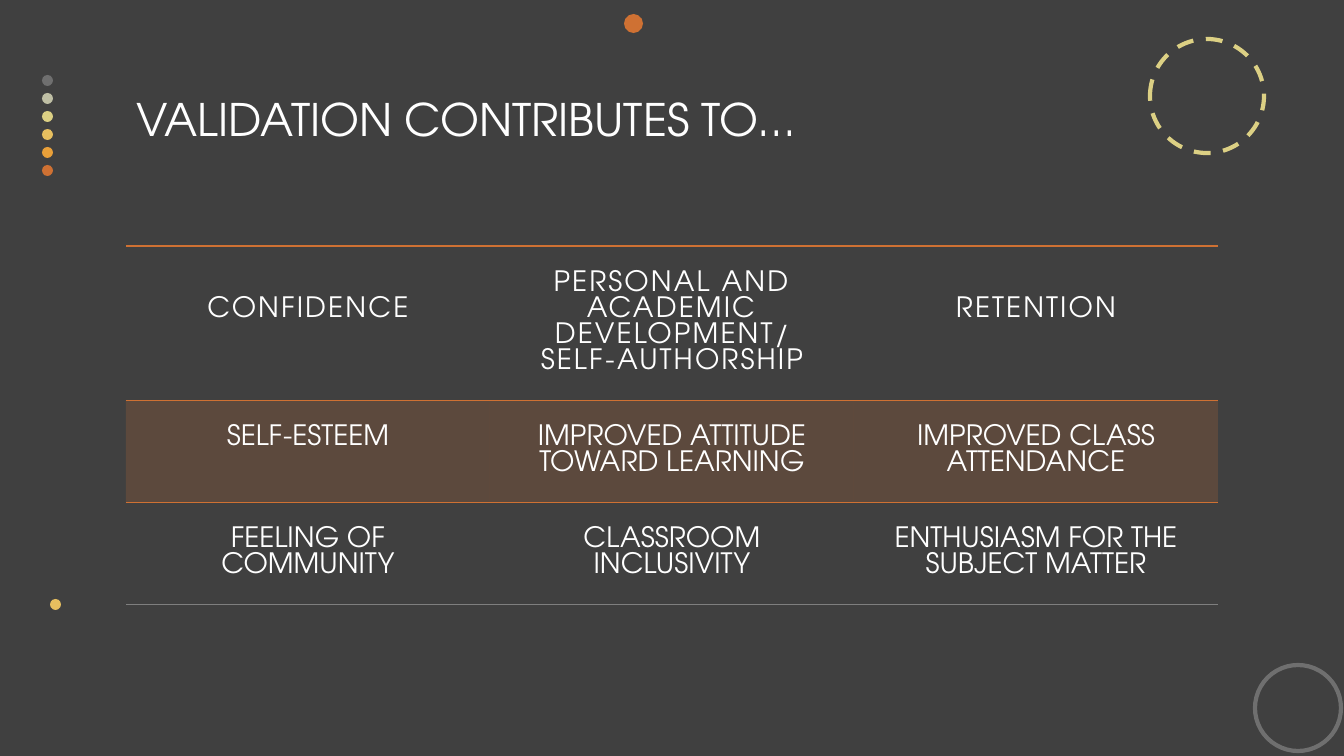
from lxml.etree import SubElement
from pptx import Presentation
from pptx.dml.color import RGBColor
from pptx.enum.dml import MSO_LINE
from pptx.enum.shapes import MSO_SHAPE
from pptx.enum.text import MSO_ANCHOR, PP_ALIGN
from pptx.oxml import parse_xml
from pptx.oxml.ns import nsdecls, qn
from pptx.util import Pt

PX = 914400 / 100.8
FONT = "TeX Gyre Adventor"
NO_GRID_STYLE = "{2D5ABB26-0587-4C30-8999-92F81FD0307C}"
COLORS = {
    "background": "404040", "white": "FFFFFF", "gray": "6F6F6F", "sage": "BFBFA5",
    "lemon": "DCD084", "yellow": "E7BF5F", "amber": "E9A039", "orange": "CF7133",
    "rule": "7F7F7F",
}


def px(*lengths):
    return [round(length * PX) for length in lengths]


def add_circle(left, top, size, color, outline=False):
    circle = page.shapes.add_shape(MSO_SHAPE.OVAL, *px(left, top, size, size))
    circle.shadow.inherit = False
    if outline:
        circle.fill.background()
        circle.line.color.rgb = RGBColor.from_string(COLORS[color])
        circle.line.width = Pt(3)
    else:
        circle.fill.solid()
        circle.fill.fore_color.rgb = RGBColor.from_string(COLORS[color])
        circle.line.fill.background()
    return circle


deck = Presentation()
deck.slide_width, deck.slide_height = px(1344, 756)
page = deck.slides.add_slide(deck.slide_layouts[5])
page.background.fill.solid()
page.background.fill.fore_color.rgb = RGBColor.from_string(COLORS["background"])

# Decorative circles
for index, color in enumerate(["gray", "sage", "lemon", "yellow", "amber", "orange"]):
    add_circle(42, 75 + 18 * index, 11, color)
add_circle(1150, 39, 114, "lemon", outline=True).line.dash_style = MSO_LINE.DASH
add_circle(624, 14, 19, "orange")
add_circle(50, 599, 11, "yellow")
add_circle(1255, 665, 86, "gray", outline=True)

# Title
title = page.shapes.title
title.left, title.top, title.width, title.height = px(126, 14, 1092, 210)
title.text_frame.text = "VALIDATION CONTRIBUTES TO…"
title.text_frame.vertical_anchor = MSO_ANCHOR.MIDDLE
heading = title.text_frame.paragraphs[0]
heading.alignment = PP_ALIGN.LEFT
heading.font.name = FONT
heading.font.size = Pt(32)
heading.font.color.rgb = RGBColor.from_string(COLORS["white"])

# Table of benefits
benefits = [
    ["CONFIDENCE", "PERSONAL AND ACADEMIC DEVELOPMENT/\nSELF-AUTHORSHIP", "RETENTION"],
    ["SELF-ESTEEM", "IMPROVED ATTITUDE TOWARD LEARNING", "IMPROVED CLASS ATTENDANCE"],
    ["FEELING OF COMMUNITY", "CLASSROOM\nINCLUSIVITY", "ENTHUSIASM FOR THE SUBJECT MATTER"],
]
row_heights = [154, 101, 102]
row_borders = [{"lnT": "orange", "lnB": "orange"}, {"lnT": "orange"}, {"lnB": "rule"}]

frame = page.shapes.add_table(3, 3, *px(126, 246, 1092, sum(row_heights)))
table = frame.table
table.first_row = False
table.horz_banding = False
table._tbl.tblPr.find(qn("a:tableStyleId")).text = NO_GRID_STYLE

for row, height in enumerate(row_heights):
    table.rows[row].height = px(height)[0]
    for column, words in enumerate(benefits[row]):
        cell = table.cell(row, column)
        # The short headings sit one text line lower than the long one
        top = 51 if row == 0 and column != 1 else 25
        cell.margin_left, cell.margin_top, cell.margin_right, cell.margin_bottom = px(24, top, 24, 25)
        cell.text_frame.text = words
        for para in cell.text_frame.paragraphs:
            para.alignment = PP_ALIGN.CENTER
            para.font.name = FONT
            para.font.size = Pt(20)
            para.font.color.rgb = RGBColor.from_string(COLORS["white"])
            if row == 0:
                para.runs[0].font._element.set("spc", "150")

        # Tinted middle row
        if row == 1:
            cell.fill.solid()
            cell.fill.fore_color.rgb = RGBColor.from_string(COLORS["orange"])
            tint = cell._tc.tcPr.find(".//" + qn("a:srgbClr"))
            SubElement(tint, qn("a:alpha"), val="20000")
        else:
            cell.fill.background()

        # Horizontal rules
        for position, (side, color) in enumerate(row_borders[row].items()):
            border = parse_xml(
                f'<a:{side} {nsdecls("a")} w="12700"><a:solidFill>'
                f'<a:srgbClr val="{COLORS[color]}"/></a:solidFill></a:{side}>'
            )
            cell._tc.tcPr.insert(position, border)

deck.save("out.pptx")
